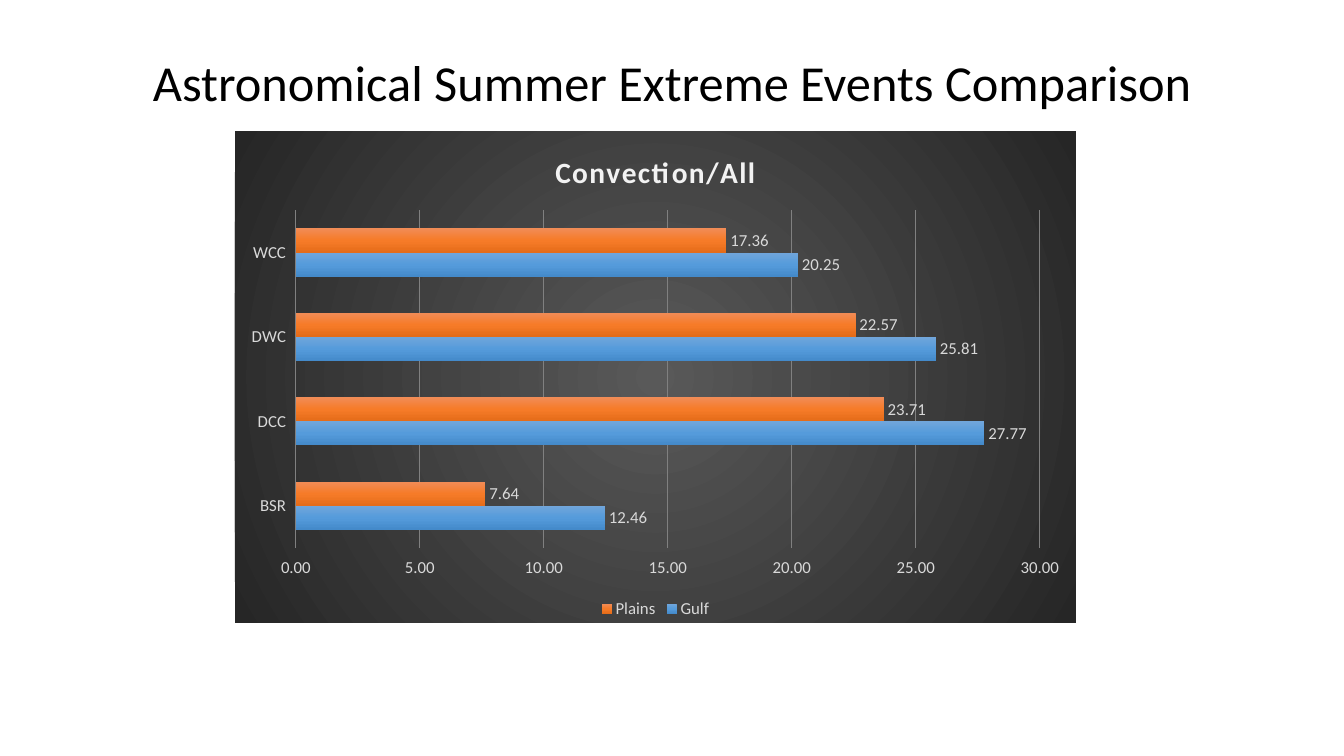
from lxml import etree
from pptx import Presentation
from pptx.chart.data import CategoryChartData
from pptx.dml.color import RGBColor
from pptx.enum import chart as kinds, text
from pptx.oxml import parse_xml
from pptx.oxml.ns import nsdecls, qn
from pptx.util import Inches, Pt

BLACK = RGBColor(0x00, 0x00, 0x00)
PALE = RGBColor(0xD9, 0xD9, 0xD9)
WHITE = RGBColor(0xF2, 0xF2, 0xF2)
GRID = RGBColor(0x80, 0x80, 0x80)
DARK = [RGBColor(0x59, 0x59, 0x59), RGBColor(0x26, 0x26, 0x26)]
BLUE = [RGBColor(0x71, 0xA6, 0xDB), RGBColor(0x55, 0x9B, 0xDB), RGBColor(0x44, 0x8A, 0xCA)]
ORANGE = [RGBColor(0xF1, 0x8C, 0x57), RGBColor(0xF6, 0x7B, 0x28), RGBColor(0xE5, 0x6C, 0x19)]

LINEAR = '<a:lin ang="5400000" scaled="0"/>'
ROUND = '<a:path path="circle"><a:fillToRect l="50000" t="50000" r="50000" b="50000"/></a:path>'


def blend(props, colors, form):
    """Fill shape properties with evenly spaced gradient stops and no outline."""
    step = 100000 // (len(colors) - 1)
    stops = "".join(
        f'<a:gs pos="{i * step}"><a:srgbClr val="{color}"/></a:gs>'
        for i, color in enumerate(colors)
    )
    props.append(parse_xml(
        f'<a:gradFill {nsdecls("a")} rotWithShape="1"><a:gsLst>{stops}</a:gsLst>{form}</a:gradFill>'
    ))
    props.append(parse_xml(f'<a:ln {nsdecls("a")}><a:noFill/></a:ln>'))


def style(font, size, color, bold=False):
    font.name = "Calibri"
    font.size = Pt(size)
    font.bold = bold
    font.color.rgb = color


prs = Presentation()
prs.slide_width = Inches(13.33)
prs.slide_height = Inches(7.5)
slide = prs.slides.add_slide(prs.slide_layouts[6])

# Heading
box = slide.shapes.add_textbox(Inches(0.92), Inches(0.4), Inches(11.5), Inches(0.9))
frame = box.text_frame
frame.word_wrap = True
frame.vertical_anchor = text.MSO_ANCHOR.MIDDLE
para = frame.paragraphs[0]
para.alignment = text.PP_ALIGN.CENTER
para.line_spacing = 0.9
run = para.add_run()
run.text = "Astronomical Summer Extreme Events Comparison"
style(run.font, 36, BLACK)

# Chart
data = CategoryChartData(number_format="0.00")
data.categories = ["BSR", "DCC", "DWC", "WCC"]
data.add_series("Gulf", [12.46, 27.77, 25.81, 20.25])
data.add_series("Plains", [7.64, 23.71, 22.57, 17.36])
chart = slide.shapes.add_chart(
    kinds.XL_CHART_TYPE.BAR_CLUSTERED,
    Inches(2.33), Inches(1.3), Inches(8.34), Inches(4.88), data,
).chart
style(chart.font, 10, BLACK)

back = etree.Element(qn("c:spPr"))
chart._chartSpace.find(qn("c:chart")).addnext(back)
blend(back, DARK, ROUND)

chart.has_title = True
run = chart.chart_title.text_frame.paragraphs[0].add_run()
run.text = "Convection/All"
style(run.font, 21, WHITE, True)
run.font._element.set("spc", "100")
chart.chart_title.include_in_layout = False

chart.has_legend = True
chart.legend.position = kinds.XL_LEGEND_POSITION.BOTTOM
chart.legend.include_in_layout = False
style(chart.legend.font, 12, PALE)

for axis in (chart.category_axis, chart.value_axis):
    style(axis.tick_labels.font, 12, PALE)
    axis.format.line.fill.background()
scale = chart.value_axis
scale.minimum_scale = 0
scale.maximum_scale = 30
scale.major_unit = 5
scale.tick_labels.number_format = "0.00"
scale.tick_labels.number_format_is_linked = False
scale.major_gridlines.format.line.color.rgb = GRID
scale.major_gridlines.format.line.width = Pt(0.75)

plot = chart.plots[0]
plot.gap_width = 150
plot.overlap = 0
plot.vary_by_categories = False
for series, colors in zip(plot.series, (BLUE, ORANGE)):
    series.invert_if_negative = False
    blend(series._element.get_or_add_spPr(), colors, LINEAR)
    labels = series.data_labels
    labels.show_value = True
    labels.position = kinds.XL_LABEL_POSITION.OUTSIDE_END
    labels.number_format = "0.00"
    labels.number_format_is_linked = False
    style(labels.font, 12, PALE)

prs.save("out.pptx")
